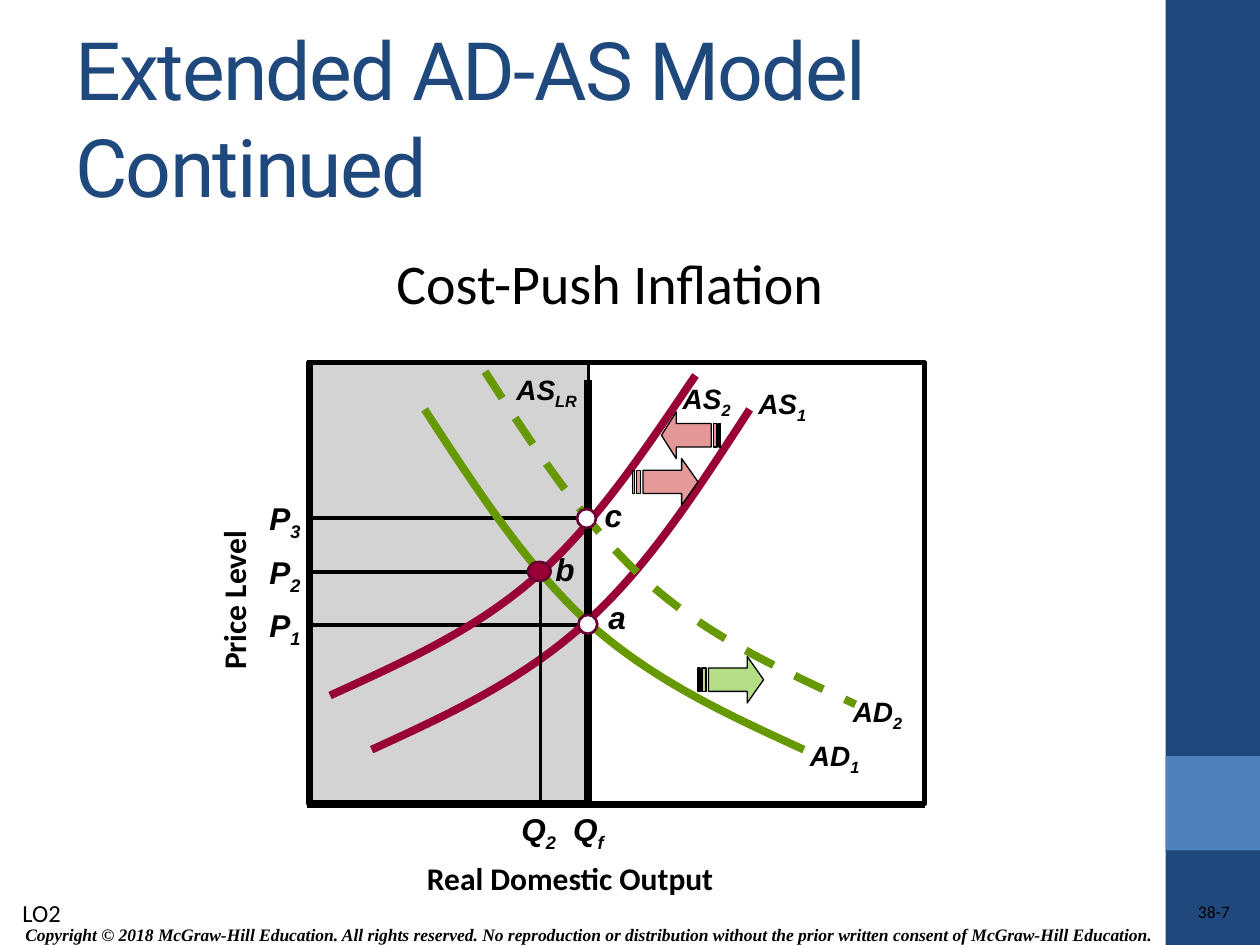
from dataclasses import dataclass

from lxml import etree
from pptx import Presentation
from pptx.dml.color import RGBColor
from pptx.enum.dml import MSO_LINE
from pptx.enum.shapes import MSO_CONNECTOR, MSO_SHAPE
from pptx.enum.text import MSO_ANCHOR, MSO_AUTO_SIZE, PP_ALIGN
from pptx.oxml.ns import qn
from pptx.util import Inches, Pt

RECT, OVAL = MSO_SHAPE.RECTANGLE, MSO_SHAPE.OVAL
STRAIGHT = MSO_CONNECTOR.STRAIGHT
LEFT, CENTER, RIGHT = PP_ALIGN.LEFT, PP_ALIGN.CENTER, PP_ALIGN.RIGHT
TOP, MIDDLE = MSO_ANCHOR.TOP, MSO_ANCHOR.MIDDLE
FIT, DASH = MSO_AUTO_SIZE.SHAPE_TO_FIT_TEXT, MSO_LINE.DASH

# The slide is a grid of square cells
COLS, ROWS = 100, 75
CELL = Inches(0.1)


@dataclass(frozen=True)
class Theme:
    navy: str = "1F497D"
    blue: str = "4F81BD"
    black: str = "000000"
    white: str = "FFFFFF"
    grey: str = "D3D3D3"
    supply: str = "990033"
    demand: str = "669900"
    ring: str = "660033"
    red: str = "C00000"
    green: str = "92D050"
    head: str = "Roboto"
    body: str = "Calibri"
    graph: str = "Arial"
    legal: str = "Times New Roman"
    title: int = 46
    subtitle: int = 32
    axis: int = 18
    curve: int = 16
    note: int = 14
    small: int = 10


T = Theme()


@dataclass(frozen=True)
class Style:
    font: str
    size: int
    color: str = T.black
    bold: bool = False
    italic: bool = False


AXIS = Style(T.body, T.axis, bold=True)
POINT = Style(T.graph, T.axis, bold=True, italic=True)
CURVE = Style(T.graph, T.curve, bold=True, italic=True)


@dataclass(frozen=True)
class Label:
    text: str
    sub: str
    box: tuple
    style: Style


@dataclass(frozen=True)
class Curve:
    points: tuple  # start, then control, control, end for each arc
    color: str
    dashed: bool = False


@dataclass(frozen=True)
class Arrow:
    box: tuple
    color: str
    alpha: int
    to_left: bool = False


def cells(*values: float) -> list:
    return [round(v * CELL) for v in values]


def rgb(color: str) -> RGBColor:
    return RGBColor.from_string(color)


def paint(sp, fill: str = "", line: str = "", width: float = 0) -> None:
    sp.shadow.inherit = False
    if fill:
        sp.fill.solid()
        sp.fill.fore_color.rgb = rgb(fill)
    else:
        sp.fill.background()
    if line:
        sp.line.color.rgb = rgb(line)
        sp.line.width = Pt(width)
    else:
        sp.line.fill.background()


def add_preset(shapes, kind, box: tuple, fill: str = "", line: str = "", width: float = 0) -> None:
    paint(shapes.add_shape(kind, *cells(*box)), fill, line, width)


def add_text(shapes, text: str, box: tuple, style: Style, sub: str = "", wrap: bool = False,
             align=LEFT, anchor=TOP, fit: bool = True, inset: bool = True,
             turn: int = 0, spacing: int = 0) -> None:
    sp = shapes.add_textbox(*cells(*box))
    sp.rotation = turn
    tf = sp.text_frame
    tf.word_wrap, tf.vertical_anchor = wrap, anchor
    if fit:
        tf.auto_size = FIT
    if not inset:
        tf.margin_left = tf.margin_right = tf.margin_top = tf.margin_bottom = 0
    p = tf.paragraphs[0]
    p.alignment = align
    f = p.font
    f.name, f.size, f.bold, f.italic = style.font, Pt(style.size), style.bold, style.italic
    f.color.rgb = rgb(style.color)
    r = p.add_run()
    r.text = text
    if spacing:
        r._r.get_or_add_rPr().set("spc", str(spacing))
    if sub:
        r = p.add_run()
        r.text = sub
        r._r.get_or_add_rPr().set("baseline", "-25000")


def add_line(shapes, x1: float, y1: float, x2: float, y2: float, width: float) -> None:
    ln = shapes.add_connector(STRAIGHT, *cells(x1, y1, x2, y2))
    ln.line.color.rgb = rgb(T.black)
    ln.line.width = Pt(width)
    etree.SubElement(ln._element.spPr, qn("a:effectLst"))


def add_curve(shapes, curve: Curve) -> None:
    points = [tuple(cells(*pt)) for pt in curve.points]
    fb = shapes.build_freeform(*points[0])
    fb.add_line_segments(points[1:], close=False)
    sp = fb.convert_to_shape()
    paint(sp, line=curve.color, width=4.5)
    if curve.dashed:
        sp.line.dash_style = DASH
    # Turn every three straight segments into one Bézier arc
    outline = sp._element.find(".//" + qn("a:path"))
    segments = outline.findall(qn("a:lnTo"))
    for i in range(0, len(segments), 3):
        arc = etree.SubElement(outline, qn("a:cubicBezTo"))
        for seg in segments[i:i + 3]:
            arc.append(seg[0])
            outline.remove(seg)


def add_arrow(shapes, arrow: Arrow) -> None:
    x, y, w, h = arrow.box

    def at(u: float, v: float) -> tuple:
        return tuple(cells(x + w * (1 - u if arrow.to_left else u), y + h * v))

    body = [(0.75, 0), (0.75, 0.25), (0.16, 0.25), (0.16, 0.75), (0.75, 0.75), (0.75, 1), (1, 0.5)]
    stripes = [[(a, 0.25), (a, 0.75), (b, 0.75), (b, 0.25)] for a, b in ((0.06, 0.12), (0, 0.03))]
    fb = shapes.build_freeform(*at(*body[0]))
    fb.add_line_segments([at(*pt) for pt in body[1:]])
    for stripe in stripes:
        fb.move_to(*at(*stripe[0]))
        fb.add_line_segments([at(*pt) for pt in stripe[1:]])
    sp = fb.convert_to_shape()
    paint(sp, arrow.color, T.black, 0.75)
    color = sp._element.spPr.find(qn("a:solidFill"))[0]
    etree.SubElement(color, qn("a:alpha")).set("val", str(arrow.alpha * 1000))


LABELS = [
    *(Label("P", n, (20.4, top, 4.6, 4), POINT) for n, top in (("1", 47.6), ("2", 43.4), ("3", 39.1))),
    Label("Q", "2", (40.4, 63.8, 4.9, 4), POINT),
    Label("Q", "f", (44.5, 63.8, 4.5, 4), POINT),
    Label("a", "", (47.3, 47, 3.4, 4), POINT),
    Label("b", "", (43.1, 43.2, 3.5, 4), POINT),
    Label("c", "", (47, 38.9, 3.4, 4), POINT),
    Label("AS", "1", (59.2, 30.2, 5.9, 3.7), CURVE),
    Label("AS", "2", (53.2, 29.8, 5.9, 3.7), CURVE),
    Label("AS", "LR", (40, 29.1, 7.2, 3.7), CURVE),
    Label("AD", "1", (63.3, 58.1, 6.1, 3.7), CURVE),
    Label("AD", "2", (66.7, 54.6, 6.1, 3.7), CURVE),
]
CURVES = [
    Curve(((59.5, 32.5), (55.4, 38.8), (51.4, 45.1), (46.3, 49.6),
           (41.3, 54.1), (35.4, 56.8), (29.5, 59.5)), T.supply),
    Curve(((38.5, 29.5), (42.5, 35.7), (46.5, 41.8), (51.4, 46.2),
           (56.3, 50.6), (62.1, 53.2), (67.9, 55.9)), T.demand, dashed=True),
    Curve(((55.2, 29.8), (51.2, 35.7), (47.3, 41.6), (42.4, 45.9),
           (37.6, 50.1), (31.9, 52.6), (26.2, 55.2)), T.supply),
    Curve(((33.7, 32.5), (37.8, 38.8), (41.9, 45.1), (46.9, 49.6),
           (52, 54.1), (57.9, 56.8), (63.8, 59.5)), T.demand),
]
ARROWS = [
    Arrow((52.5, 32.7, 4.7, 3.7), T.red, 41, to_left=True),
    Arrow((50.2, 36.4, 5.2, 3.7), T.red, 40),
    Arrow((55.4, 52.1, 5.2, 3.7), T.green, 69),
]


def main() -> None:
    prs = Presentation()
    prs.slide_width, prs.slide_height = COLS * CELL, ROWS * CELL
    shapes = prs.slides.add_slide(prs.slide_layouts[6]).shapes

    # Side band and footer
    add_preset(shapes, RECT, (92.5, 0, 7.5, ROWS), T.navy)
    add_preset(shapes, RECT, (92.5, 60, 7.5, 7.5), T.blue)
    add_text(shapes, "Copyright © 2018 McGraw-Hill Education. All rights reserved. No reproduction or "
             "distribution without the prior written consent of McGraw-Hill Education.",
             (0.6, 72.8, 92.2, 2.8), Style(T.legal, T.small, bold=True, italic=True),
             wrap=True, align=CENTER, anchor=MIDDLE, fit=False)
    add_text(shapes, "38-7", (78.1, 71.5, 19.5, 2), Style(T.body, T.small),
             wrap=True, align=RIGHT, fit=False, inset=False)
    add_text(shapes, "LO2", (0.8, 70.8, 5.3, 3.4), Style(T.body, T.note), wrap=True)

    # Headings
    add_text(shapes, "Extended AD-AS Model Continued", (5, 3, 83.3, 12.5),
             Style(T.head, T.title, T.navy), wrap=True, anchor=MIDDLE, fit=False, spacing=-100)
    add_text(shapes, "Cost-Push Inflation", (23.9, 19.2, 49, 6.4), Style(T.body, T.subtitle),
             wrap=True, align=CENTER)

    # Plot area, axes and labels
    add_preset(shapes, RECT, (24.7, 28.9, 22, 34.7), T.grey, T.black, 1.5)
    add_preset(shapes, RECT, (24.5, 28.8, 48.9, 35), line=T.black, width=3)
    add_line(shapes, 24.6, 28.6, 24.6, 64.1, 3)
    add_line(shapes, 24.4, 63.9, 73.4, 63.9, 3)
    add_text(shapes, "Real Domestic Output", (32.9, 67.7, 24.9, 4), AXIS)
    add_text(shapes, "Price Level", (12, 45.6, 13.1, 4), AXIS, turn=270)
    for label in LABELS:
        add_text(shapes, label.text, label.box, label.style, sub=label.sub)

    # Price levels, curves and quantities
    for end, level in ((46.7, 49.6), (42.9, 45.4), (46.6, 41.1)):
        add_line(shapes, end, level, 24.8, level, 2.25)
    for curve in CURVES:
        add_curve(shapes, curve)
    add_line(shapes, 46.7, 30.2, 46.7, 63.7, 4.5)
    add_line(shapes, 42.9, 45.3, 42.9, 63.5, 2.25)

    # Equilibrium points and shift arrows
    for box, fill in (((45.9, 48.8, 1.5, 1.5), T.white), ((45.8, 40.4, 1.5, 1.5), T.white),
                      ((41.9, 44.6, 1.8, 1.5), T.supply)):
        add_preset(shapes, OVAL, box, fill, T.ring, 1.5)
    for arrow in ARROWS:
        add_arrow(shapes, arrow)

    prs.save("out.pptx")


if __name__ == "__main__":
    main()
